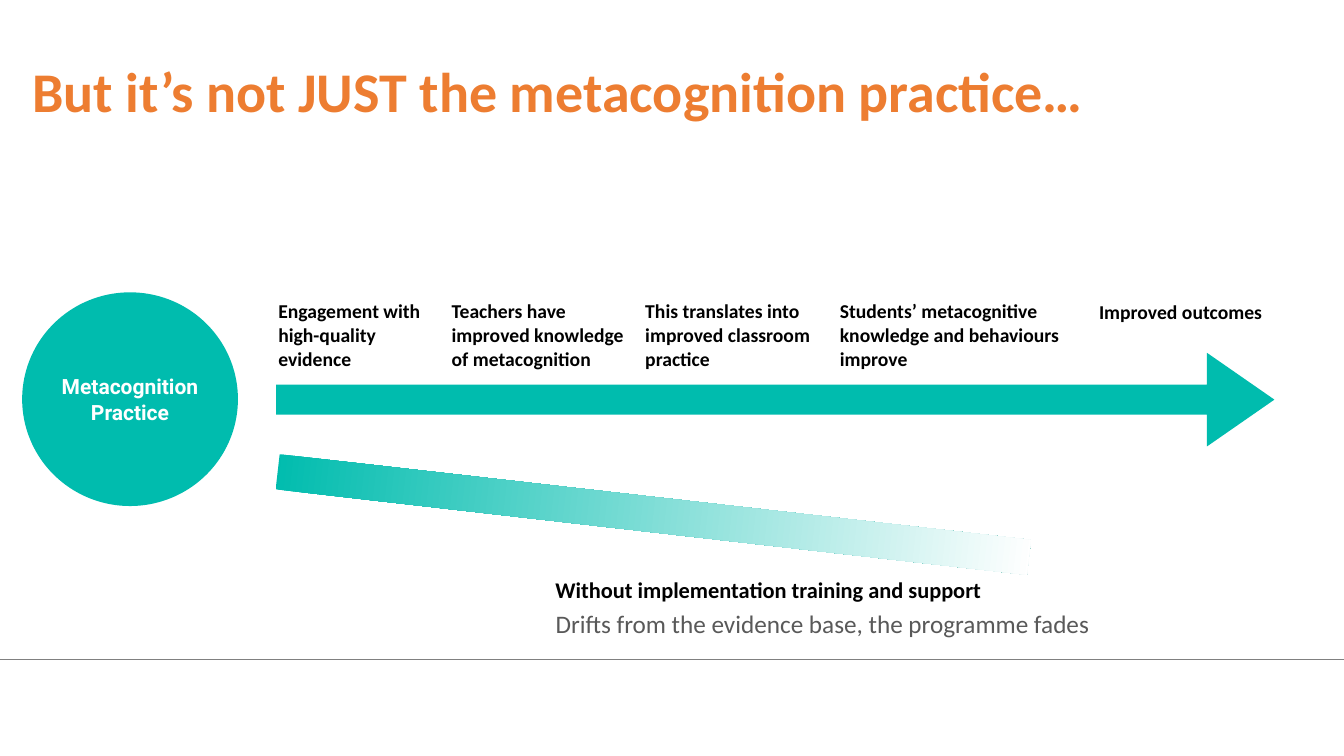
from dataclasses import dataclass

from pptx import Presentation
from pptx.dml.color import RGBColor as RGB
from pptx.enum.shapes import MSO_CONNECTOR as Link, MSO_SHAPE as Kind
from pptx.enum.text import MSO_ANCHOR as Anchor, MSO_AUTO_SIZE as Fit, PP_ALIGN as Align
from pptx.oxml.ns import qn
from pptx.util import Inches, Pt
from lxml.etree import SubElement


@dataclass(frozen=True)
class Theme:
    teal: RGB = RGB.from_string("00BCAE")
    orange: RGB = RGB.from_string("ED7D31")
    black: RGB = RGB.from_string("000000")
    white: RGB = RGB.from_string("FFFFFF")
    dark: RGB = RGB.from_string("595959")
    gray: RGB = RGB.from_string("808080")
    body: str = "Calibri"
    badge: str = "Roboto"
    title: int = 40
    note: int = 18
    lead: int = 16
    disc: int = 15
    step: int = 14


class Board:
    def __init__(self, slide, theme):
        self.slide = slide
        self.theme = theme

    def rule(self, y, width):
        line = self.slide.shapes.add_connector(
            Link.STRAIGHT, 0, Inches(y), Inches(width), Inches(y))
        line.line.color.rgb = self.theme.gray
        line.line.width = Pt(0.5)
        SubElement(line._element.spPr, qn("a:effectLst"))

    def shape(self, kind, *box):
        shape = self.slide.shapes.add_shape(kind, *map(Inches, box))
        shape.shadow.inherit = False
        shape.fill.solid()
        shape.fill.fore_color.rgb = self.theme.teal
        shape.line.fill.background()
        return shape

    def fade(self, *box, turn):
        band = self.shape(Kind.RECTANGLE, *box)
        band.rotation = turn
        band.fill.gradient()
        band.fill.gradient_angle = 0
        ends = self.theme.teal, self.theme.white
        for stop, color, place in zip(band.fill.gradient_stops, ends, (0, 1)):
            stop.color.rgb = color
            stop.position = place

    def arrow(self, *box):
        arrow = self.shape(Kind.RIGHT_ARROW, *box)
        arrow.adjustments[0] = 0.32
        arrow.adjustments[1] = 0.72

    def disc(self, text, *box):
        frame = self.shape(Kind.OVAL, *box).text_frame
        self.inset(frame)
        self.put(frame, text, self.theme.disc, self.theme.white, font=self.theme.badge)
        frame.paragraphs[0].alignment = Align.CENTER

    def title(self, text, *box):
        frame = self.frame(*box)
        self.put(frame, text, self.theme.title, self.theme.orange)

    def label(self, text, *box, size, color=None, bold=True, wrap=True):
        frame = self.frame(*box)
        frame.word_wrap = wrap
        frame.auto_size = Fit.SHAPE_TO_FIT_TEXT
        self.inset(frame)
        self.put(frame, text, size, color or self.theme.black, bold)

    def frame(self, *box):
        frame = self.slide.shapes.add_textbox(*map(Inches, box)).text_frame
        frame.word_wrap = True
        return frame

    def inset(self, frame):
        frame.vertical_anchor = Anchor.MIDDLE
        frame.margin_left = frame.margin_right = Inches(0.03)
        frame.margin_top = frame.margin_bottom = Inches(0.03)

    def put(self, frame, text, size, color, bold=True, font=None):
        para = frame.paragraphs[0]
        para.text = text
        para.font.name = font or self.theme.body
        para.font.size = Pt(size)
        para.font.bold = bold
        para.font.color.rgb = color


STEPS = [
    ("Engagement with high-quality evidence", 2.73, 2.94, 1.68, 0.76),
    ("Teachers have improved knowledge of metacognition", 4.45, 2.94, 1.93, 0.76),
    ("This translates into improved classroom practice", 6.37, 2.94, 1.77, 0.76),
    ("Students’ metacognitive knowledge and behaviours improve", 8.3, 2.94, 2.46, 0.76),
    ("Improved outcomes", 10.87, 2.95, 2.02, 0.29),
]


def main():
    deck = Presentation()
    deck.slide_width, deck.slide_height = Inches(13.33), Inches(7.5)
    theme = Theme()
    board = Board(deck.slides.add_slide(deck.slide_layouts[6]), theme)

    board.rule(6.54, 13.33)
    board.title("But it’s not JUST the metacognition practice…", 0.22, 0.51, 11.92, 0.81)
    board.fade(2.73, 4.93, 7.5, 0.35, turn=6.5)
    board.arrow(2.74, 3.5, 9.9, 0.93)
    board.disc("Metacognition Practice", 0.22, 2.9, 2.14, 2.12)
    for text, *box in STEPS:
        board.label(text, *box, size=theme.step)
    board.label("Without implementation training and support",
                5.48, 5.68, 4.33, 0.33, size=theme.lead, wrap=False)
    board.label("Drifts from the evidence base, the programme fades",
                5.48, 6, 5.71, 0.36, size=theme.note, color=theme.dark, bold=False)
    deck.save("out.pptx")


if __name__ == "__main__":
    main()
